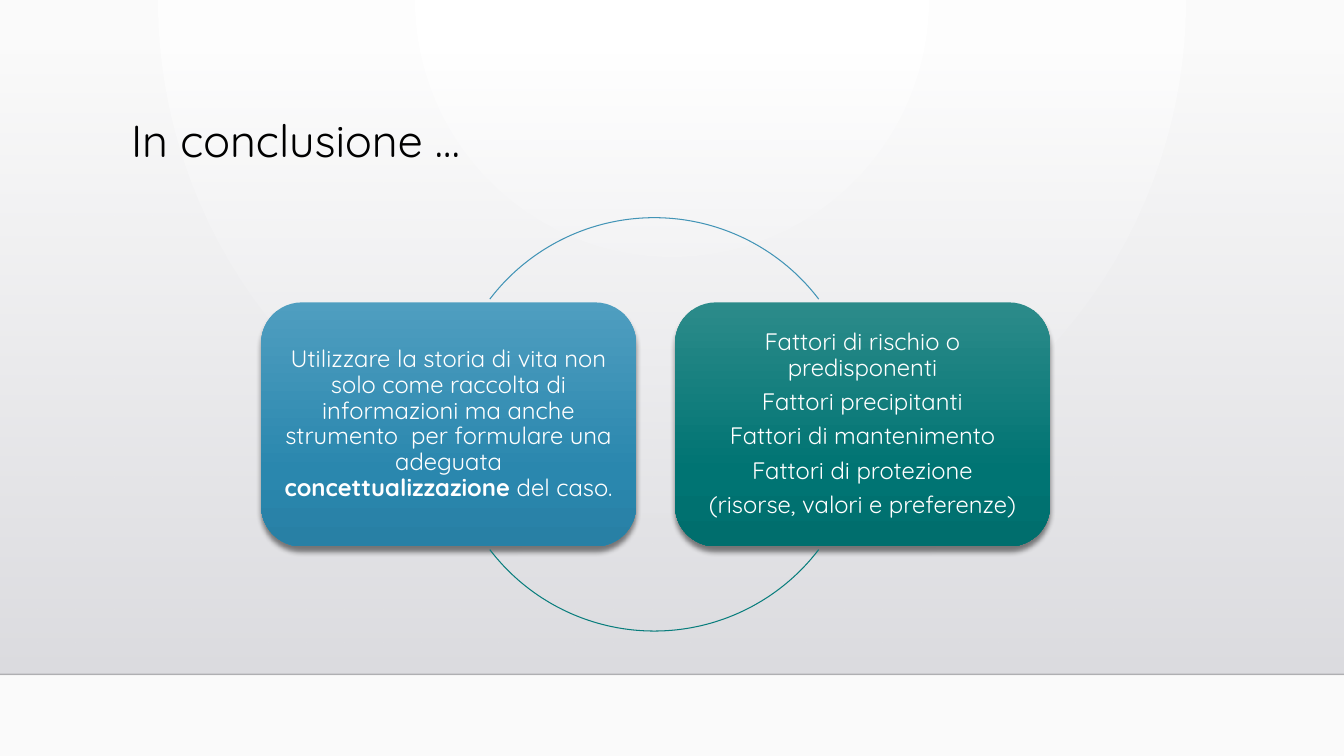
from dataclasses import dataclass
from typing import Any

from lxml.etree import SubElement
from pptx import Presentation
from pptx.dml.color import RGBColor
from pptx.enum.shapes import MSO_CONNECTOR, MSO_SHAPE
from pptx.enum.text import MSO_ANCHOR, MSO_AUTO_SIZE, PP_ALIGN
from pptx.oxml import parse_xml
from pptx.oxml.ns import nsdecls, qn
from pptx.util import Inches, Pt

WIDTH, HEIGHT = Inches(13.33), Inches(7.5)


@dataclass(frozen=True)
class Stop:
    position: int
    color: str
    opacity: int = 100


@dataclass(frozen=True)
class Theme:
    font: str = "Quicksand"
    title_size: int = 32
    body_size: int = 17
    title_color: str = "000000"
    body_color: str = "FFFFFF"
    rule_color: str = "000001"
    backdrop: tuple[Stop, ...] = (Stop(0, "FFFFFF"), Stop(100, "FAFAFA"))
    band: tuple[Stop, ...] = (Stop(0, "DCDCE0", 0), Stop(100, "DEDEE2"))
    blue: tuple[Stop, ...] = (Stop(0, "4F9EC0"), Stop(69, "2A87AE"), Stop(100, "2880A5"))
    teal: tuple[Stop, ...] = (Stop(0, "2C8B8A"), Stop(69, "007473"), Stop(100, "006E6D"))
    blue_arc: str = "4294B6"
    teal_arc: str = "087D7C"


@dataclass(frozen=True)
class Area:
    """A rectangle given as shares of the slide's width and height."""
    left: float
    top: float
    width: float
    height: float

    def lengths(self) -> tuple[int, int, int, int]:
        return (round(self.left * WIDTH), round(self.top * HEIGHT),
                round(self.width * WIDTH), round(self.height * HEIGHT))


@dataclass(frozen=True)
class Run:
    text: str
    bold: bool = False


@dataclass(frozen=True)
class Card:
    column: int
    stops: tuple[Stop, ...]
    paragraphs: tuple[tuple[Run, ...], ...]


@dataclass(frozen=True)
class Arc:
    start: float
    end: float
    color: str


THEME = Theme()
TITLE_AREA = Area(0.09, 0.105, 0.746, 0.168)
BAND_AREA = Area(0, 0.068, 1, 0.824)
CARD_AREA = Area(0.1943, 0.4, 0.279, 0.3227)
CARD_PITCH = 0.308
CIRCLE_AREA = Area(0.333, 0.288, 0.3076, 0.5467)
ARC_TILT = 37.3
LINEAR = '<a:lin ang="5400000" scaled="0"/>'
CIRCULAR = ('<a:path path="circle">'
            '<a:fillToRect l="43000" t="0" r="43000" b="100000"/></a:path>')

CARDS = (
    Card(0, THEME.blue, ((
        Run("Utilizzare la storia di vita non solo come raccolta di informazioni "
            "ma anche strumento  per formulare una adeguata "),
        Run("concettualizzazione", bold=True),
        Run(" del caso."),
    ),)),
    Card(1, THEME.teal, (
        (Run("Fattori di rischio o predisponenti"),),
        (Run("Fattori precipitanti"),),
        (Run("Fattori di mantenimento"),),
        (Run("Fattori di protezione"),),
        (Run("(risorse, valori e preferenze)"),),
    )),
)
ARCS = (
    Arc(180 + ARC_TILT, 360 - ARC_TILT, THEME.blue_arc),
    Arc(ARC_TILT, 180 - ARC_TILT, THEME.teal_arc),
)


def apply_format(target: Any, values: dict[str, Any]) -> None:
    for name, value in values.items():
        setattr(target, name, value)


def format_font(font: Any, size: int, color: str, bold: bool = False) -> None:
    apply_format(font, {"name": THEME.font, "size": Pt(size), "bold": bold})
    font.color.rgb = RGBColor.from_string(color)


def set_gradient(fill: Any, holder: Any, stops: tuple[Stop, ...], direction: str) -> None:
    """Swap the solid fill inside holder for a gradient."""
    fill.solid()
    marks = "".join(
        f'<a:gs pos="{stop.position * 1000}"><a:srgbClr val="{stop.color}">'
        f'<a:alpha val="{stop.opacity * 1000}"/></a:srgbClr></a:gs>' for stop in stops)
    solid = next(holder.iter(qn("a:solidFill")))
    solid.getparent().replace(solid, parse_xml(
        f'<a:gradFill {nsdecls("a")} rotWithShape="1">'
        f'<a:gsLst>{marks}</a:gsLst>{direction}</a:gradFill>'))


def add_preset(slide: Any, preset: MSO_SHAPE, area: Area) -> Any:
    shape = slide.shapes.add_shape(preset, *area.lengths())
    shape.shadow.inherit = False
    return shape


def add_band(slide: Any) -> None:
    band = add_preset(slide, MSO_SHAPE.RECTANGLE, BAND_AREA)
    band.line.fill.background()
    set_gradient(band.fill, band._element.spPr, THEME.band, LINEAR)

    # Thin rule along the foot of the band
    bottom = round((BAND_AREA.top + BAND_AREA.height) * HEIGHT)
    rule = slide.shapes.add_connector(MSO_CONNECTOR.STRAIGHT, 0, bottom, WIDTH, bottom)
    rule.line.width = Pt(1)
    rule.line.color.rgb = RGBColor.from_string(THEME.rule_color)
    color = next(rule._element.spPr.iter(qn("a:srgbClr")))
    SubElement(color, qn("a:alpha"), val="20000")
    SubElement(rule._element.spPr, qn("a:effectLst"))


def add_arc(slide: Any, arc: Arc) -> None:
    shape = add_preset(slide, MSO_SHAPE.ARC, CIRCLE_AREA)
    # Angles are stored in 60000ths of a degree, adjustments in 100000ths
    shape.adjustments[0] = arc.start * 0.6
    shape.adjustments[1] = arc.end * 0.6
    shape.fill.background()
    shape.line.width = Pt(0.75)
    shape.line.color.rgb = RGBColor.from_string(arc.color)


def add_card(slide: Any, card: Card) -> None:
    area = Area(CARD_AREA.left + card.column * CARD_PITCH, CARD_AREA.top,
                CARD_AREA.width, CARD_AREA.height)
    shape = add_preset(slide, MSO_SHAPE.ROUNDED_RECTANGLE, area)
    shape.line.fill.background()
    set_gradient(shape.fill, shape._element.spPr, card.stops, LINEAR)
    shape._element.spPr.find(qn("a:effectLst")).append(parse_xml(
        f'<a:outerShdw {nsdecls("a")} blurRad="{Pt(4)}" dist="{Pt(4)}" dir="5400000" '
        'rotWithShape="0"><a:srgbClr val="000000"><a:alpha val="48000"/>'
        '</a:srgbClr></a:outerShdw>'))

    frame = shape.text_frame
    apply_format(frame, {"word_wrap": True, "vertical_anchor": MSO_ANCHOR.MIDDLE})
    apply_format(frame, dict.fromkeys(
        ("margin_left", "margin_top", "margin_right", "margin_bottom"), Inches(0.07)))
    for index, runs in enumerate(card.paragraphs):
        paragraph = frame.add_paragraph() if index else frame.paragraphs[0]
        apply_format(paragraph, {"alignment": PP_ALIGN.CENTER, "line_spacing": 0.9,
                                 "space_after": Pt(6)})
        for item in runs:
            run = paragraph.add_run()
            run.text = item.text
            format_font(run.font, THEME.body_size, THEME.body_color, item.bold)


def place_title(slide: Any, text: str) -> None:
    title = slide.shapes.title
    apply_format(title, dict(zip(("left", "top", "width", "height"), TITLE_AREA.lengths())))
    frame = title.text_frame
    frame.text = text
    apply_format(frame, {"word_wrap": True, "auto_size": MSO_AUTO_SIZE.NONE,
                         "vertical_anchor": MSO_ANCHOR.MIDDLE})
    paragraph = frame.paragraphs[0]
    apply_format(paragraph, {"alignment": PP_ALIGN.LEFT, "line_spacing": 0.9})
    format_font(paragraph.runs[0].font, THEME.title_size, THEME.title_color)
    # Bring the title in front of the band
    slide.shapes._spTree.append(title._element)


def main() -> None:
    presentation = Presentation()
    apply_format(presentation, {"slide_width": WIDTH, "slide_height": HEIGHT})
    slide = presentation.slides.add_slide(presentation.slide_layouts.get_by_name("Title Only"))

    # Backdrop
    set_gradient(slide.background.fill, slide._element, THEME.backdrop, CIRCULAR)
    add_band(slide)

    # Cycle of two cards joined by arcs
    for card, arc in zip(CARDS, ARCS):
        add_card(slide, card)
        add_arc(slide, arc)

    place_title(slide, "In conclusione …")
    presentation.save("out.pptx")


if __name__ == "__main__":
    main()
